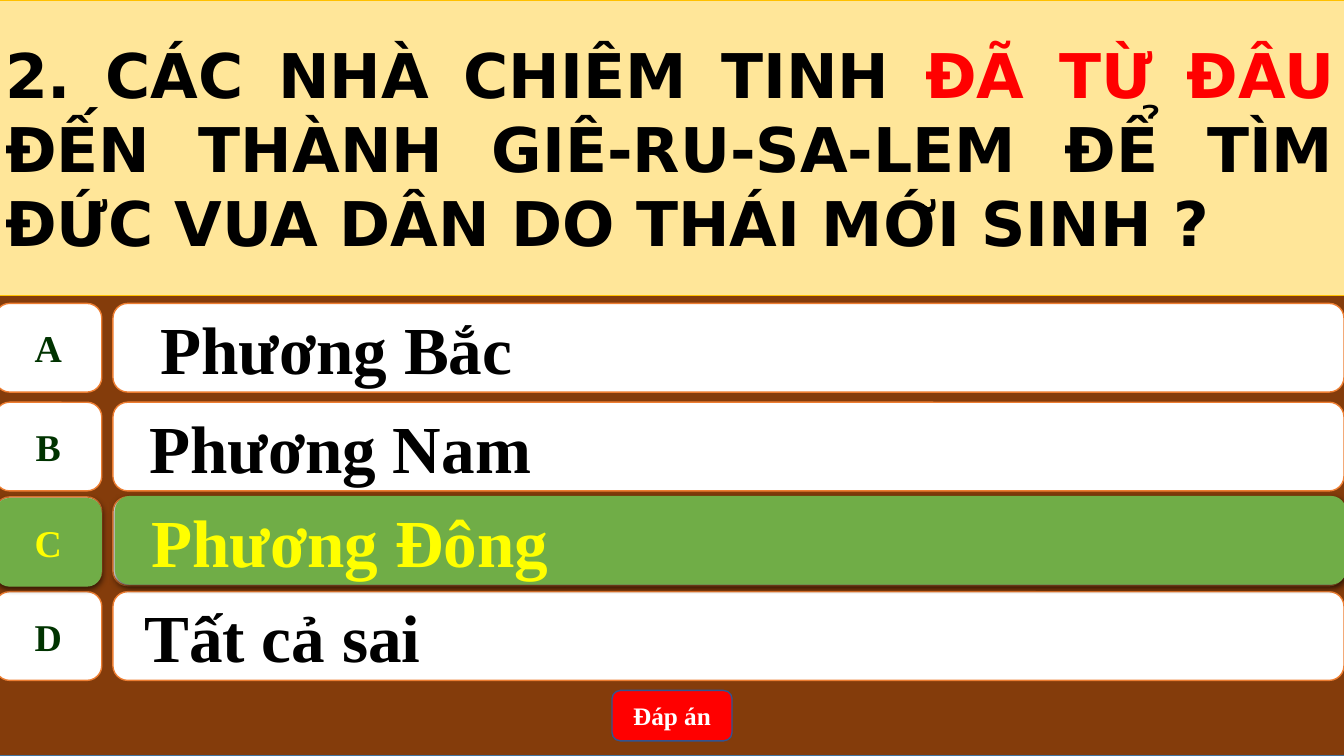
from lxml import etree
from pptx import Presentation
from pptx import util as u
from pptx.dml.color import RGBColor
from pptx.enum import shapes, text
from pptx.oxml.ns import qn

BROWN = RGBColor(0x84, 0x3C, 0x0B)
STEEL = RGBColor(0x43, 0x73, 0x9E)
CREAM = RGBColor(0xFF, 0xE6, 0x99)
GOLD = RGBColor(0xFF, 0xC0, 0x00)
ORANGE = RGBColor(0xED, 0x7D, 0x31)
GREEN = RGBColor(0x70, 0xAD, 0x47)
DARK_GREEN = RGBColor(0x00, 0x33, 0x00)
YELLOW = RGBColor(0xFF, 0xFF, 0x00)
RED = RGBColor(0xFF, 0x00, 0x00)
NAVY = RGBColor(0x32, 0x54, 0x91)
WHITE = RGBColor(0xFF, 0xFF, 0xFF)
BLACK = RGBColor(0x00, 0x00, 0x00)

SERIF, SANS = "Times New Roman", "DejaVu Sans"
SHAPE, ALIGN = shapes.MSO_SHAPE, text.PP_ALIGN
LEFT, FULL_WIDTH = -0.05, 13.39
ROW_HEIGHT = 0.88


def write(sp, parts, size=48, font=SERIF, align=ALIGN.LEFT, indent=0, wrap=True):
    """Fill a shape with one bold paragraph of (text, colour) parts."""
    tf = sp.text_frame
    tf.auto_size = text.MSO_AUTO_SIZE.NONE
    tf.word_wrap = wrap
    tf.vertical_anchor = text.MSO_ANCHOR.MIDDLE
    p = tf.paragraphs[0]
    p.alignment = align
    p._p.get_or_add_pPr().set("marL", str(u.Inches(indent)))
    for words, color in parts:
        r = p.add_run()
        r.text = words
        r.font.name, r.font.size, r.font.bold = font, u.Pt(size), True
        r.font.color.rgb = color


class QuizSlide:
    def __init__(self, prs):
        self.s = prs.slides.add_slide(prs.slide_layouts[5])

    def paint(self, sp, fill, line=None, width=1):
        sp.fill.solid()
        sp.fill.fore_color.rgb = fill
        if line is None:
            sp.line.fill.background()
        else:
            sp.line.color.rgb = line
            sp.line.width = u.Pt(width)

    def box(self, kind, x, y, w, h, fill, line=None):
        sp = self.s.shapes.add_shape(kind, *map(u.Inches, (x, y, w, h)))
        sp.shadow.inherit = False
        self.paint(sp, fill, line)
        return sp

    def drop_shadow(self, sp):
        effects = sp._element.spPr.find(qn("a:effectLst"))
        shadow = etree.SubElement(effects, qn("a:outerShdw"), blurRad=str(u.Pt(4.5)),
                                  dist=str(u.Pt(1.5)), dir="5400000", rotWithShape="0")
        color = etree.SubElement(shadow, qn("a:srgbClr"), val=str(BLACK))
        etree.SubElement(color, qn("a:alpha"), val="63000")

    def title(self, parts, x, y, w, h):
        sp = self.s.shapes.title
        sp.left, sp.top, sp.width, sp.height = map(u.Inches, (x, y, w, h))
        self.paint(sp, CREAM, GOLD, 0.5)
        write(sp, parts, size=44, font=SANS, align=ALIGN.JUSTIFY)
        # Bring the title in front of the backdrop
        self.s.shapes._spTree.append(sp._element)

    def answer(self, letter, words, top, indent, correct=False):
        fill, line = (GREEN, None) if correct else (WHITE, ORANGE)
        shift = 0.01 if correct else 0
        tag = self.box(SHAPE.FLOWCHART_ALTERNATE_PROCESS, LEFT, top + shift,
                       1.06, ROW_HEIGHT, fill, line)
        bar = self.box(SHAPE.ROUNDED_RECTANGLE, 1.12 + 2 * shift, top - shift,
                       12.21, ROW_HEIGHT, fill, line)
        write(tag, [(letter, YELLOW if correct else DARK_GREEN)], size=27,
              align=ALIGN.CENTER, wrap=False)
        write(bar, [(words, YELLOW if correct else BLACK)], indent=indent)
        if correct:
            self.drop_shadow(tag)
            self.drop_shadow(bar)

    def button(self, words, x, y, w, h):
        sp = self.box(SHAPE.ROUNDED_RECTANGLE, x, y, w, h, RED, NAVY)
        write(sp, [(words, WHITE)], size=18, align=ALIGN.CENTER)


def main():
    prs = Presentation()
    prs.slide_width, prs.slide_height = u.Inches(13.33), u.Inches(7.5)
    quiz = QuizSlide(prs)

    # Backdrop and question
    quiz.box(SHAPE.RECTANGLE, LEFT, 0, FULL_WIDTH, 7.5, BROWN, STEEL)
    quiz.title([("2. CÁC NHÀ CHIÊM TINH ", BLACK),
                ("ĐÃ TỪ ĐÂU ", RED),
                ("ĐẾN THÀNH GIÊ-RU-SA-LEM ĐỂ TÌM ĐỨC VUA DÂN DO THÁI MỚI SINH ?", BLACK)],
               LEFT, 0, FULL_WIDTH, 2.93)

    # Answers, then the correct one highlighted on top
    answers = [("A", "Phương Bắc", 3.01, 0.33),
               ("B", "Phương Nam", 3.99, 0.22),
               ("C", "Phương Đông", 4.93, 0.22),
               ("D", "Tất cả sai", 5.87, 0.17)]
    for row in answers:
        quiz.answer(*row)
    quiz.answer(*answers[2], correct=True)

    # Answer button
    quiz.button("Đáp án", 6.07, 6.85, 1.19, 0.5)

    prs.save("out.pptx")


if __name__ == "__main__":
    main()
